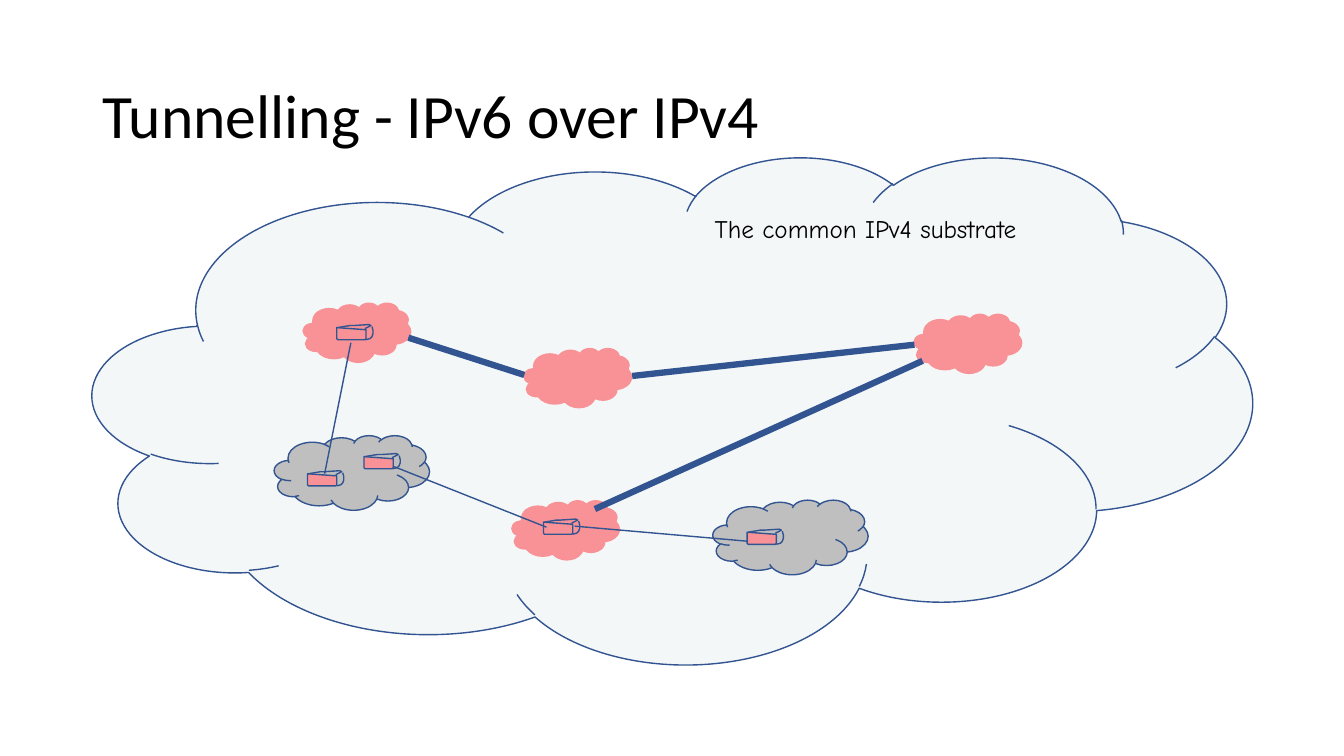
from lxml import etree
from pptx import Presentation
from pptx.dml.color import RGBColor
from pptx.enum.shapes import MSO_CONNECTOR, MSO_SHAPE
from pptx.enum.text import MSO_ANCHOR
from pptx.oxml.ns import qn
from pptx.util import Inches, Pt

CLOUD = MSO_SHAPE.CLOUD
STRAIGHT = MSO_CONNECTOR.STRAIGHT
MIDDLE, TOP = MSO_ANCHOR.MIDDLE, MSO_ANCHOR.TOP

COLORS = {
    "text": "000000",
    "outline": "325491",
    "substrate": "F4F7F7",
    "ipv4": "F89296",
    "ipv6": "BFBFBF",
}

IPV4_SIZE = (1.08, 0.6)
IPV6_SIZE = (1.54, 0.74)
ROUTER_FRONT = [(0, 0), (0, 0.11), (0.01, 0.12), (0.28, 0.12),
                (0.29, 0.11), (0.29, 0.02), (0.27, 0.02)]
ROUTER_TOP = [(0.01, 0), (0.07, -0.01), (0.13, -0.02), (0.17, -0.02),
              (0.32, -0.03), (0.34, -0.02), (0.32, -0.01), (0.28, 0.01)]
ROUTER_SIDE = [(0.35, -0.01), (0.36, 0.03), (0.36, 0.06),
               (0.35, 0.09), (0.33, 0.11), (0.29, 0.12)]


def color(name):
    """Return the named palette colour."""
    return RGBColor.from_string(COLORS[name])


def style(shape, fill=None, outlined=True):
    """Set the fill and outline of a shape and drop its shadow."""
    shape.shadow.inherit = False
    if fill:
        shape.fill.solid()
        shape.fill.fore_color.rgb = color(fill)
    else:
        shape.fill.background()
    if outlined:
        shape.line.color.rgb = color("outline")
        shape.line.width = Pt(1)
    else:
        shape.line.fill.background()


def add_text(slide, words, box, size, font, anchor=TOP, wrap=True):
    """Add a one-line text box."""
    frame = slide.shapes.add_textbox(*map(Inches, box)).text_frame
    frame.word_wrap = wrap
    frame.vertical_anchor = anchor
    run = frame.paragraphs[0].add_run()
    run.text = words
    run.font.size = Pt(size)
    run.font.name = font
    run.font.color.rgb = color("text")


def add_cloud(slide, corner, size, fill, outlined=True):
    """Add a network cloud."""
    cloud = slide.shapes.add_shape(CLOUD, *map(Inches, corner + size))
    style(cloud, fill, outlined)


def add_router(slide, left, top):
    """Add a router box made of a front, a top and a side."""
    router = slide.shapes.add_group_shape()
    faces = ((ROUTER_FRONT, "ipv4"), (ROUTER_TOP, None), (ROUTER_SIDE, None))
    for outline, fill in faces:
        points = [(Inches(left + x), Inches(top + y)) for x, y in outline]
        builder = router.shapes.build_freeform(*points[0])
        builder.add_line_segments(points[1:], close=fill is not None)
        style(builder.convert_to_shape(), fill)


def add_link(slide, start, end, width):
    """Add a straight link between two points."""
    link = slide.shapes.add_connector(STRAIGHT, *map(Inches, start + end))
    link.line.color.rgb = color("outline")
    link.line.width = Pt(width)
    etree.SubElement(link._element.spPr, qn("a:effectLst"))


def main():
    """Build the tunnelling slide."""
    deck = Presentation()
    deck.slide_width, deck.slide_height = Inches(13.33), Inches(7.5)
    slide = deck.slides.add_slide(deck.slide_layouts[6])

    add_text(slide, "Tunnelling - IPv6 over IPv4", (0.92, 0.4, 11.5, 1.45),
             44, "Calibri", MIDDLE)
    add_cloud(slide, (0.92, 1.55), (11.5, 5.03), "substrate")
    add_text(slide, "The common IPv4 substrate", (6.99, 2.07, 3.93, 0.4),
             18, "Comic Neue", wrap=False)

    for corner in ((3, 3), (5.19, 3.45), (5.07, 4.96), (9.06, 3.11)):
        add_cloud(slide, corner, IPV4_SIZE, "ipv4", outlined=False)
    for corner in ((2.72, 4.32), (7.07, 4.96)):
        add_cloud(slide, corner, IPV6_SIZE, "ipv6")

    for corner in ((3.05, 4.7), (3.61, 4.53), (7.41, 5.28)):
        add_router(slide, *corner)
    for start, end in (((6.27, 3.73), (9.07, 3.42)),
                       ((4.05, 3.35), (5.2, 3.72)),
                       ((5.9, 5.05), (9.15, 3.58))):
        add_link(slide, start, end, 4.5)

    add_link(slide, (7.42, 5.37), (5.7, 5.22), 1)
    add_router(slide, 5.39, 5.18)
    add_link(slide, (3.91, 4.63), (5.42, 5.23), 1)
    add_router(slide, 3.34, 3.25)
    add_link(slide, (3.22, 4.7), (3.48, 3.4), 1)

    deck.save("out.pptx")


if __name__ == "__main__":
    main()
